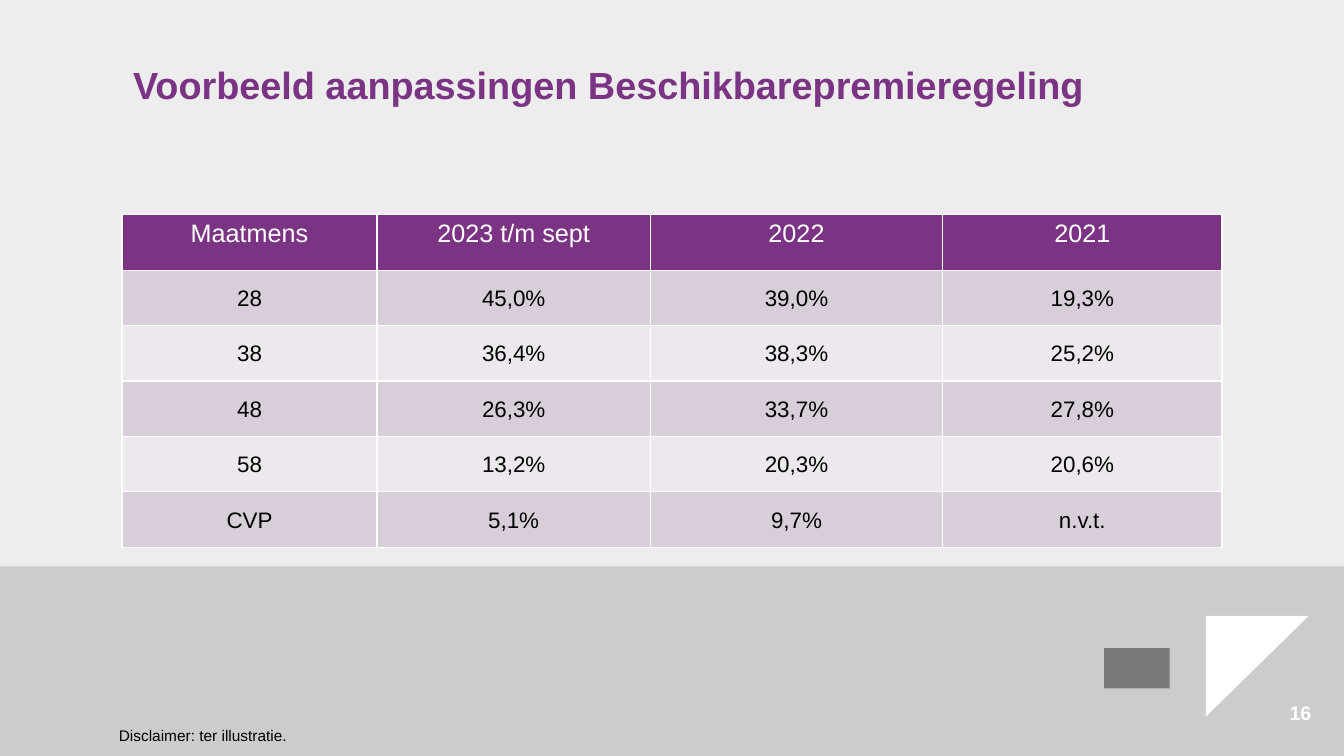
"""Build the slide with example adjustments to the defined contribution scheme."""
from lxml import etree
from pptx import Presentation
from pptx.dml.color import RGBColor
from pptx.enum.shapes import MSO_SHAPE
from pptx.enum.text import MSO_ANCHOR, PP_ALIGN
from pptx.oxml.ns import qn
from pptx.util import Inches, Pt

RECT = MSO_SHAPE.RECTANGLE
TOP, MIDDLE, BOTTOM = MSO_ANCHOR.TOP, MSO_ANCHOR.MIDDLE, MSO_ANCHOR.BOTTOM
CENTER = PP_ALIGN.CENTER
FONT = "Arial"
COLORS = {
    "purple": "7B3484",
    "band_dark": "D7CED9",
    "band_light": "ECE8ED",
    "upper": "EDEDED",
    "lower": "CCCCCC",
    "mark": "7A7A7A",
    "white": "FFFFFF",
    "black": "000000",
}
ROWS = [
    ("Maatmens", "2023 t/m sept", "2022", "2021"),
    ("28", "45,0%", "39,0%", "19,3%"),
    ("38", "36,4%", "38,3%", "25,2%"),
    ("48", "26,3%", "33,7%", "27,8%"),
    ("58", "13,2%", "20,3%", "20,6%"),
    ("CVP", "5,1%", "9,7%", "n.v.t."),
]
COL_WIDTHS = (2.53, 2.71, 2.9, 2.77)
ROW_HEIGHT = 0.55


def rgb(name):
    return RGBColor.from_string(COLORS[name])


def paint(sp, color):
    sp.shadow.inherit = False
    sp.fill.solid()
    sp.fill.fore_color.rgb = rgb(color)
    sp.line.fill.background()


def add_rect(s, x, y, w, h, color):
    sp = s.shapes.add_shape(RECT, Inches(x), Inches(y), Inches(w), Inches(h))
    paint(sp, color)


def add_polygon(s, points, color):
    start, *rest = [(Inches(x), Inches(y)) for x, y in points]
    builder = s.shapes.build_freeform(*start)
    builder.add_line_segments(rest, close=True)
    paint(builder.convert_to_shape(), color)


def set_margins(frame, left, top, right, bottom):
    frame.margin_left, frame.margin_top = Inches(left), Inches(top)
    frame.margin_right, frame.margin_bottom = Inches(right), Inches(bottom)


def style_font(p, size, color, bold=False):
    p.font.name = FONT
    p.font.size = Pt(size)
    p.font.bold = bold
    p.font.color.rgb = rgb(color)


def add_text(s, x, y, w, h, text, size, color, bold=False, anchor=TOP, margins=(0, 0, 0, 0)):
    tf = s.shapes.add_textbox(Inches(x), Inches(y), Inches(w), Inches(h)).text_frame
    tf.word_wrap = True
    tf.vertical_anchor = anchor
    set_margins(tf, *margins)
    p = tf.paragraphs[0]
    p.text = text
    style_font(p, size, color, bold)


def add_borders(cell, color):
    tc_pr = cell._tc.get_or_add_tcPr()
    for side in ("lnL", "lnR", "lnT", "lnB"):
        ln = etree.SubElement(tc_pr, qn(f"a:{side}"), w=str(Pt(1)))
        fill = etree.SubElement(ln, qn("a:solidFill"))
        etree.SubElement(fill, qn("a:srgbClr"), val=COLORS[color])


def fill_cell(cell, text, row):
    add_borders(cell, "white")
    cell.fill.solid()
    p = cell.text_frame.paragraphs[0]
    p.text = text
    p.alignment = CENTER
    if row == 0:
        cell.fill.fore_color.rgb = rgb("purple")
        set_margins(cell, 0.1, 0.05, 0.1, 0.05)
        style_font(p, 18, "white")
    else:
        cell.fill.fore_color.rgb = rgb("band_dark" if row % 2 else "band_light")
        cell.vertical_anchor = MIDDLE
        set_margins(cell, 0.07, 0, 0.07, 0)
        p.line_spacing = 1.07
        p.space_after = Pt(8)
        style_font(p, 16, "black")


def add_rate_table(s, x, y):
    table = s.shapes.add_table(
        len(ROWS), len(COL_WIDTHS), Inches(x), Inches(y),
        Inches(sum(COL_WIDTHS)), Inches(ROW_HEIGHT * len(ROWS)),
    ).table
    for col, width in zip(table.columns, COL_WIDTHS):
        col.width = Inches(width)
    for r, values in enumerate(ROWS):
        table.rows[r].height = Inches(ROW_HEIGHT)
        for c, text in enumerate(values):
            fill_cell(table.cell(r, c), text, r)


def main():
    prs = Presentation()
    prs.slide_width, prs.slide_height = Inches(13.33), Inches(7.5)
    s = prs.slides.add_slide(prs.slide_layouts[6])
    add_rect(s, 0, 4.87, 13.33, 2.63, "lower")
    add_rect(s, 0, 0, 13.33, 5.62, "upper")
    add_polygon(s, [(11.96, 7.11), (12.98, 6.11), (11.96, 6.11)], "white")
    add_rect(s, 10.95, 6.43, 0.65, 0.4, "mark")
    add_text(s, 12.79, 6.95, 0.43, 0.28, "16", 14, "white", bold=True)
    add_text(s, 1.32, 0.54, 9.51, 0.95, "Voorbeeld aanpassingen Beschikbarepremieregeling",
             27, "purple", bold=True, anchor=BOTTOM, margins=(0, 0, 0, 0.43))
    add_rate_table(s, 1.21, 2.13)
    add_text(s, 1.08, 7.11, 7.97, 0.39, "Disclaimer: ter illustratie.",
             11, "black", margins=(0.1, 0.1, 0.1, 0.1))
    prs.save("out.pptx")


if __name__ == "__main__":
    main()
